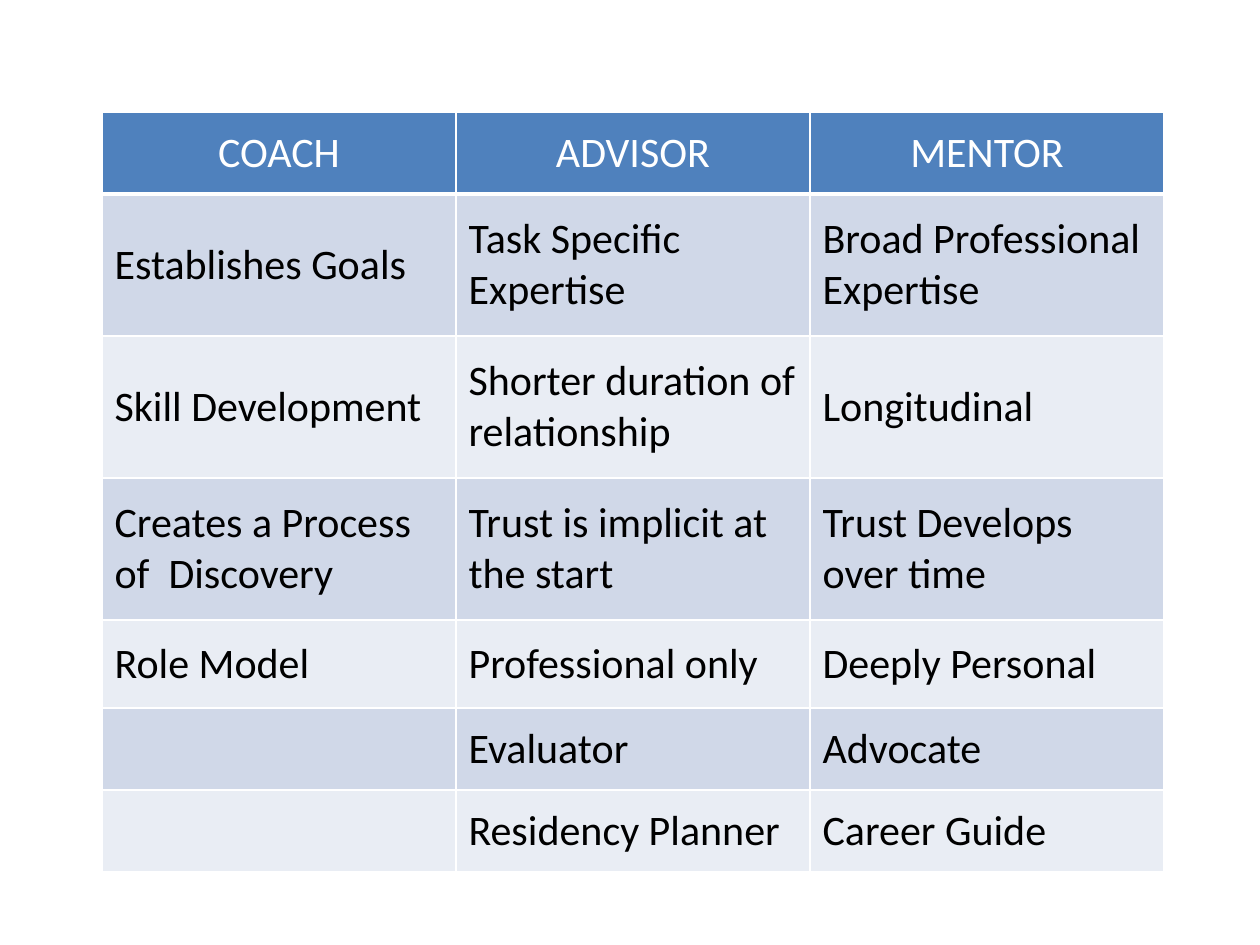
from lxml import etree
from pptx import Presentation, util as u
from pptx.dml.color import RGBColor
from pptx.enum import text
from pptx.oxml import ns

PX = u.Inches(1) // 126
COLS = [354, 354, 354]
ROWS = [82, 142, 142, 142, 88, 82, 82]
HEADER, BANDS = "4F81BD", ["D0D8E8", "E9EDF4"]
ROLES = [
    ["COACH", "ADVISOR", "MENTOR"],
    ["Establishes Goals", "Task Specific Expertise", "Broad Professional Expertise"],
    ["Skill Development", "Shorter duration of relationship", "Longitudinal"],
    ["Creates a Process of  Discovery", "Trust is implicit at the start", "Trust Develops over time"],
    ["Role Model", "Professional only", "Deeply Personal"],
    ["", "Evaluator", "Advocate"],
    ["", "Residency Planner", "Career Guide"],
]


def px(n):
    return u.Emu(n * PX)


def rgb(color):
    return RGBColor.from_string(color)


def write(tf, words, size=24, color="000000", font="Calibri", align=text.PP_ALIGN.LEFT):
    p = tf.paragraphs[0]
    p.alignment = align
    r = p.add_run()
    r.text = words
    r.font.size = u.Pt(size)
    r.font.name = font
    r.font.color.rgb = rgb(color)


def set_borders(cell, color="FFFFFF", bottom=1):
    tcPr = cell._tc.get_or_add_tcPr()
    for side, width in (("L", 1), ("R", 1), ("T", 1), ("B", bottom)):
        ln = etree.SubElement(tcPr, ns.qn(f"a:ln{side}"), w=str(u.Pt(width)))
        fill = etree.SubElement(ln, ns.qn("a:solidFill"))
        etree.SubElement(fill, ns.qn("a:srgbClr"), val=color)


def style_cell(cell, words, fill, bottom=1, **fmt):
    set_borders(cell, bottom=bottom)
    cell.fill.solid()
    cell.fill.fore_color.rgb = rgb(fill)
    cell.vertical_anchor = text.MSO_ANCHOR.MIDDLE
    if words:
        write(cell.text_frame, words, **fmt)


def add_table(s, rows, x, y):
    table = s.shapes.add_table(len(ROWS), len(COLS), px(x), px(y),
                               px(sum(COLS)), px(sum(ROWS))).table
    for col, width in zip(table.columns, COLS):
        col.width = px(width)
    for i, (row, height, words) in enumerate(zip(table.rows, ROWS, rows)):
        row.height = px(height)
        for cell, label in zip(row.cells, words):
            if i == 0:
                style_cell(cell, label, HEADER, bottom=3, color="FFFFFF",
                           align=text.PP_ALIGN.CENTER)
            else:
                style_cell(cell, label, BANDS[(i - 1) % 2])


def main():
    prs = Presentation()
    prs.slide_width, prs.slide_height = px(1260), px(945)
    s = prs.slides.add_slide(prs.slide_layouts[6])
    add_table(s, ROLES, 102, 112)
    prs.save("out.pptx")


if __name__ == "__main__":
    main()
